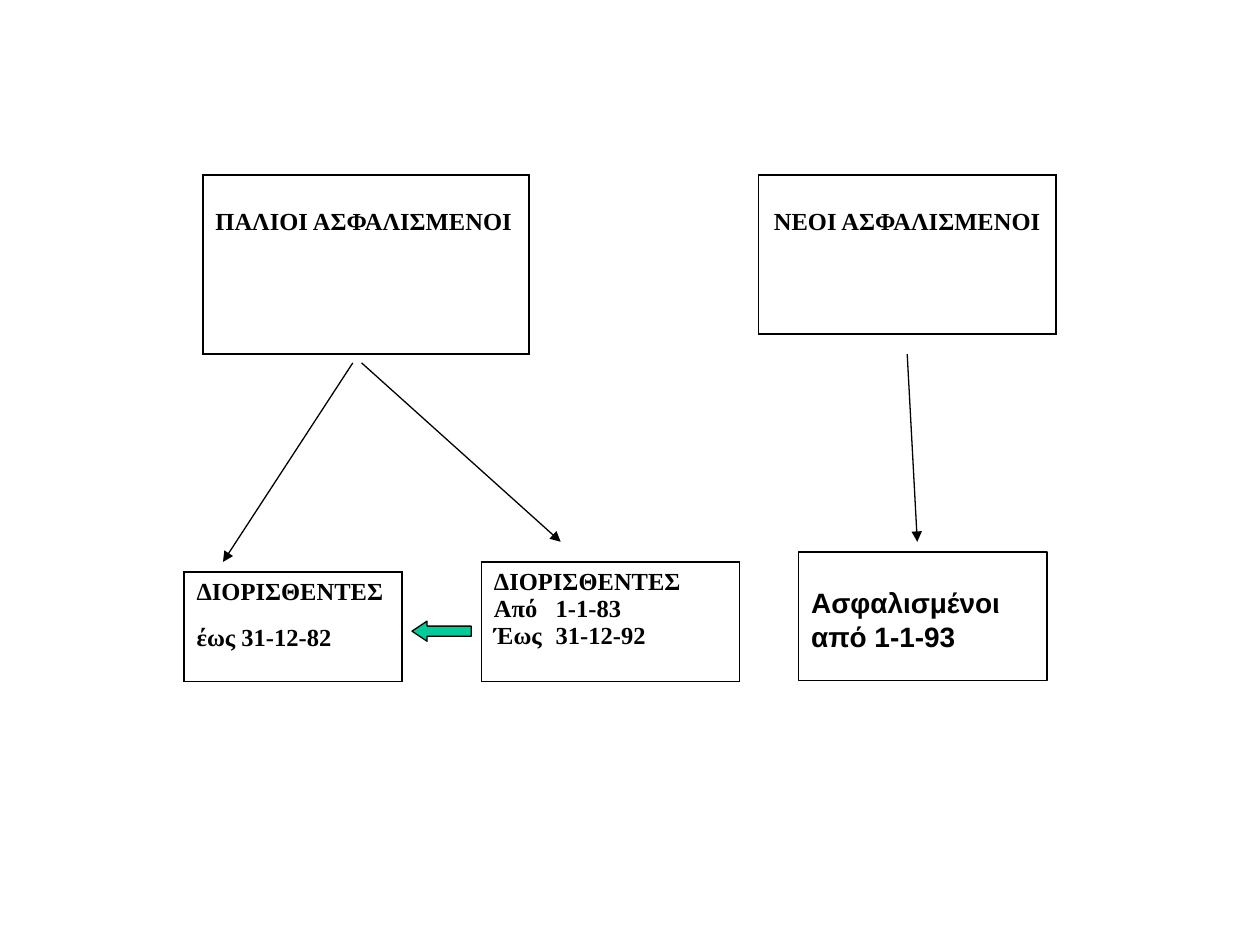
from lxml import etree
from pptx import Presentation
from pptx.dml.color import RGBColor
from pptx.enum.shapes import MSO_CONNECTOR, MSO_SHAPE
from pptx.enum.text import MSO_ANCHOR, PP_ALIGN
from pptx.oxml.ns import qn
from pptx.util import Inches, Pt

STRAIGHT = MSO_CONNECTOR.STRAIGHT
RECTANGLE, LEFT_ARROW = MSO_SHAPE.RECTANGLE, MSO_SHAPE.LEFT_ARROW
TOP = MSO_ANCHOR.TOP
LEFT, CENTER = PP_ALIGN.LEFT, PP_ALIGN.CENTER

COLORS = {"ink": "000000", "arrow": "00CC99"}
SERIF, SANS = "Times New Roman", "Arial"
TAB_STOP = Inches(0.49)


def color(name):
    return RGBColor.from_string(COLORS[name])


def write_lines(frame, lines, font, size, align=LEFT, gap=0):
    """Write bold paragraphs; gap is the space in points between them."""
    for index, line in enumerate(lines):
        paragraph = frame.paragraphs[0] if index == 0 else frame.add_paragraph()
        paragraph.text = line
        paragraph.alignment = align
        if index and gap:
            paragraph.space_before = Pt(gap)
        if "\t" in line:
            tabs = etree.SubElement(paragraph._p.get_or_add_pPr(), qn("a:tabLst"))
            etree.SubElement(tabs, qn("a:tab"), pos=str(TAB_STOP), algn="l")
        paragraph.font.name = font
        paragraph.font.size = Pt(size)
        paragraph.font.bold = True
        paragraph.font.color.rgb = color("ink")


def add_border(cell):
    properties = cell._tc.get_or_add_tcPr()
    for side in ("a:lnL", "a:lnR", "a:lnT", "a:lnB"):
        line = etree.SubElement(properties, qn(side), w=str(Pt(1)))
        fill = etree.SubElement(line, qn("a:solidFill"))
        etree.SubElement(fill, qn("a:srgbClr"), val=COLORS["ink"])


def add_table_box(slide, box, lines, top_margin=0.05, align=LEFT, gap=0):
    """Add a bordered table of a single cell."""
    table = slide.shapes.add_table(1, 1, *map(Inches, box)).table
    table.first_row = table.horz_banding = False
    cell = table.cell(0, 0)
    cell.margin_top = Inches(top_margin)
    add_border(cell)
    cell.fill.background()
    write_lines(cell.text_frame, lines, SERIF, 14, align, gap)


def add_outlined_shape(slide, kind, box):
    shape = slide.shapes.add_shape(kind, *map(Inches, box))
    shape.shadow.inherit = False
    shape.line.color.rgb = color("ink")
    shape.line.width = Pt(0.75)
    return shape


def add_arrow(slide, start, end):
    arrow = slide.shapes.add_connector(STRAIGHT, *map(Inches, start + end))
    arrow.line.color.rgb = color("ink")
    arrow.line.width = Pt(0.75)
    etree.SubElement(arrow.line._get_or_add_ln(), qn("a:tailEnd"), type="triangle")
    etree.SubElement(arrow._element.spPr, qn("a:effectLst"))


def main():
    prs = Presentation()
    prs.slide_width, prs.slide_height = Inches(10), Inches(7.5)
    slide = prs.slides.add_slide(prs.slide_layouts[6])

    # The two groups of insured
    add_table_box(slide, (1.61, 1.39, 2.59, 1.42), ["ΠΑΛΙΟΙ ΑΣΦΑΛΙΣΜΕΝΟΙ"],
                  top_margin=0.27)
    add_table_box(slide, (6.02, 1.39, 2.36, 1.26), ["ΝΕΟΙ ΑΣΦΑΛΙΣΜΕΝΟΙ"],
                  top_margin=0.27, align=CENTER)

    # Old insured by date of appointment
    add_table_box(slide, (1.46, 4.54, 1.73, 0.87),
                  ["ΔΙΟΡΙΣΘΕΝΤΕΣ", "έως 31-12-82"], gap=11)
    add_table_box(slide, (3.82, 4.46, 2.05, 0.95),
                  ["ΔΙΟΡΙΣΘΕΝΤΕΣ", "Από\t1-1-83", "Έως\t31-12-92"])

    # New insured by date
    new_insured = add_outlined_shape(slide, RECTANGLE, (6.34, 4.38, 1.97, 1.02))
    new_insured.fill.background()
    frame = new_insured.text_frame
    frame.word_wrap = True
    frame.vertical_anchor = TOP
    frame.margin_top = Inches(0.27)
    write_lines(frame, ["Ασφαλισμένοι", "από 1-1-93"], SANS, 16)

    # Arrows from each group to its dates
    for start, end in (((2.8, 2.88), (1.77, 4.46)),
                       ((2.87, 2.88), (4.45, 4.3)),
                       ((7.2, 2.81), (7.28, 4.3))):
        add_arrow(slide, start, end)

    # Block arrow between the appointment periods
    block_arrow = add_outlined_shape(slide, LEFT_ARROW, (3.27, 4.93, 0.47, 0.16))
    block_arrow.adjustments[0] = 0.5
    block_arrow.adjustments[1] = 0.75
    block_arrow.fill.solid()
    block_arrow.fill.fore_color.rgb = color("arrow")

    prs.save("out.pptx")


if __name__ == "__main__":
    main()
